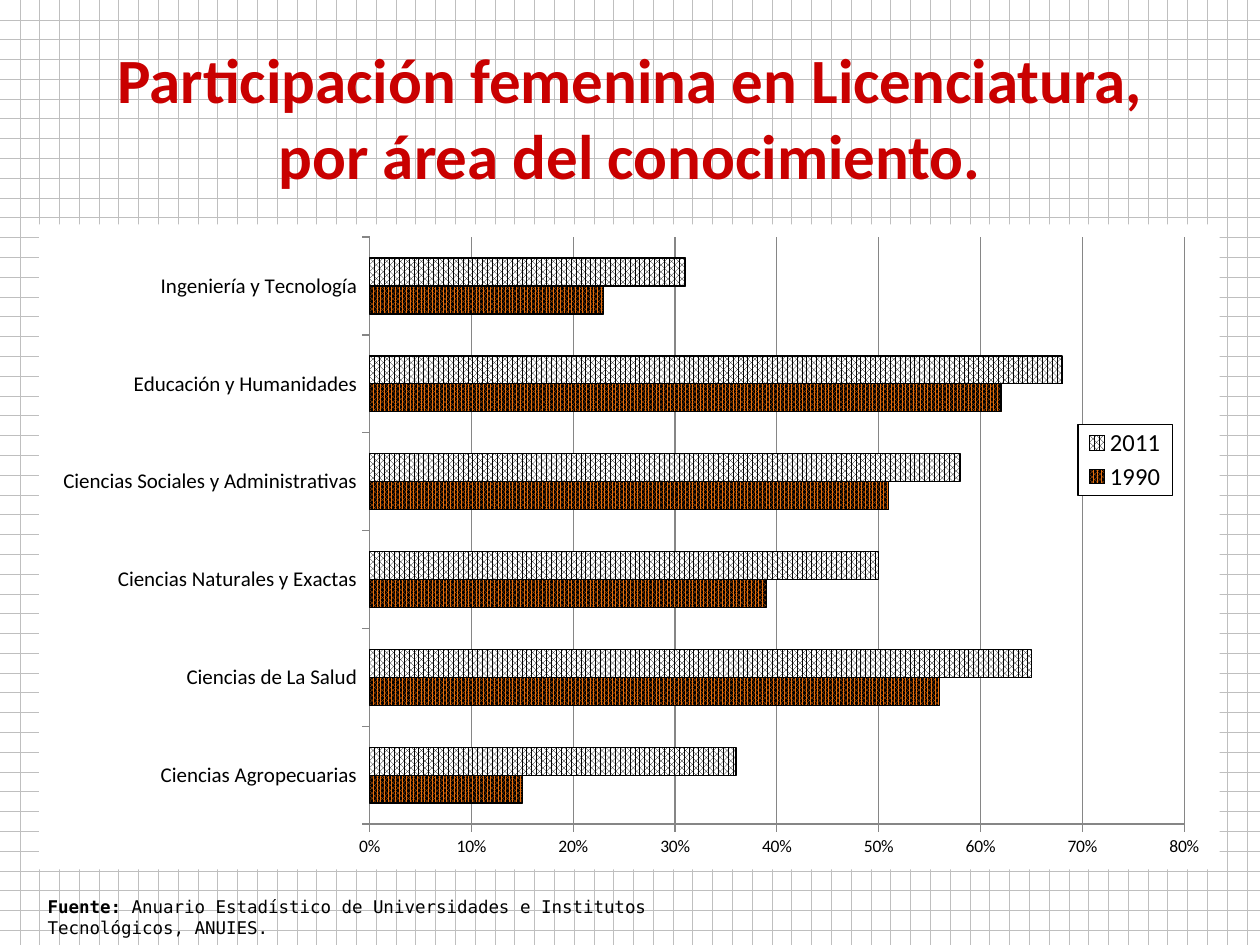
"""Build a slide that compares women's share of degrees by field in 1990 and 2011."""
from pptx import Presentation
from pptx.chart.data import CategoryChartData
from pptx.dml.color import RGBColor
from pptx.enum.chart import XL_CHART_TYPE, XL_LEGEND_POSITION, XL_TICK_MARK
from pptx.enum.dml import MSO_PATTERN
from pptx.enum.text import MSO_ANCHOR, PP_ALIGN
from pptx.oxml import parse_xml
from pptx.util import Inches, Pt

BARS = XL_CHART_TYPE.BAR_CLUSTERED
RIGHT = XL_LEGEND_POSITION.RIGHT
OUT = XL_TICK_MARK.OUTSIDE
GRID = MSO_PATTERN.DOTTED_GRID
DENSE, LOOSE = MSO_PATTERN.PERCENT_80, MSO_PATTERN.PERCENT_75
CENTER, MIDDLE = PP_ALIGN.CENTER, MSO_ANCHOR.MIDDLE

TITLE = "Participación femenina en Licenciatura, por área del conocimiento."
SOURCE = [
    ("Fuente: ", True),
    ("Anuario Estadístico de Universidades e Institutos Tecnológicos, ANUIES.", False),
]
SHARES = [
    ("Ciencias Agropecuarias", 0.15, 0.36),
    ("Ciencias de La Salud", 0.56, 0.65),
    ("Ciencias Naturales y Exactas", 0.39, 0.50),
    ("Ciencias Sociales y Administrativas", 0.51, 0.58),
    ("Educación y Humanidades", 0.62, 0.68),
    ("Ingeniería y Tecnología", 0.23, 0.31),
]
YEARS = [("1990", DENSE, "orange", "black"), ("2011", LOOSE, "black", "white")]
THEME = {
    "font": "Calibri", "mono": "DejaVu Sans Mono",
    "red": "C90000", "orange": "E46C0A", "black": "000000",
    "white": "FFFFFF", "grid": "BFBFBF", "axis": "868686",
    "title": 36, "small": 10, "label": 12, "legend": 14,
}
PLACES = {
    "title": (0.5, 0.3, 9, 1.25),
    "chart": (0.31, 1.78, 9.37, 5.12),
    "source": (0.28, 7.06, 5.34, 0.27),
}
PLOT_BOX = (0.28, 0.02, 0.69, 0.91)
KEY_BOX = (0.88, 0.31, 0.08, 0.11)
SPACES = (
    'xmlns:c="http://schemas.openxmlformats.org/drawingml/2006/chart" '
    'xmlns:a="http://schemas.openxmlformats.org/drawingml/2006/main"'
)


def place(name):
    return [Inches(n) for n in PLACES[name]]


def color(name):
    return RGBColor.from_string(THEME[name])


def style(font, size, face="font", tint="black", bold=False):
    font.name, font.size, font.bold = THEME[face], Pt(THEME[size]), bold
    font.color.rgb = color(tint)


def pattern(fill, kind, front, back):
    fill.patterned()
    fill.pattern = kind
    fill.fore_color.rgb, fill.back_color.rgb = color(front), color(back)


def layout(box, inner=False):
    target = '<c:layoutTarget val="inner"/>' if inner else ""
    modes = "".join(f'<c:{side}Mode val="edge"/>' for side in "xy")
    sizes = "".join(f'<c:{tag} val="{n}"/>' for tag, n in zip("xywh", box))
    return parse_xml(
        f"<c:layout {SPACES}><c:manualLayout>{target}{modes}{sizes}"
        "</c:manualLayout></c:layout>"
    )


def panel(line):
    edge = f'<a:solidFill><a:srgbClr val="{THEME[line]}"/></a:solidFill>' if line else "<a:noFill/>"
    return parse_xml(
        f'<c:spPr {SPACES}><a:solidFill><a:srgbClr val="{THEME["white"]}"/></a:solidFill>'
        f'<a:ln w="9525">{edge}</a:ln></c:spPr>'
    )


def drop_layout(node):
    for old in node.xpath("./c:layout"):
        node.remove(old)


def add_title(slide):
    title = slide.shapes.title
    title.left, title.top, title.width, title.height = place("title")
    frame = title.text_frame
    frame.text, frame.word_wrap, frame.vertical_anchor = TITLE, True, MIDDLE
    line = frame.paragraphs[0]
    line.alignment = CENTER
    style(line.runs[0].font, "title", tint="red", bold=True)


def add_shares(slide):
    data = CategoryChartData(number_format="0%")
    data.categories = [row[0] for row in SHARES]
    for col, year in enumerate(YEARS, 1):
        data.add_series(year[0], [row[col] for row in SHARES])
    chart = slide.shapes.add_chart(BARS, *place("chart"), data).chart
    chart.has_title = False
    style(chart.font, "small")

    plot = chart.plots[0]
    plot.gap_width, plot.overlap, plot.vary_by_categories = 150, 0, False
    for bars, (_, kind, front, back) in zip(plot.series, YEARS):
        pattern(bars.format.fill, kind, front, back)
        bars.format.line.color.rgb = color("black")
        bars.format.line.width = Pt(0.75)

    fields, scale = chart.category_axis, chart.value_axis
    for axis, size in ((fields, "label"), (scale, "small")):
        axis.major_tick_mark = OUT
        axis.format.line.color.rgb = color("axis")
        style(axis.tick_labels.font, size)
    scale.minimum_scale, scale.maximum_scale, scale.major_unit = 0, 0.8, 0.1
    scale.has_major_gridlines = True
    scale.major_gridlines.format.line.color.rgb = color("axis")
    scale.tick_labels.number_format = "0%"
    scale.tick_labels.number_format_is_linked = False

    chart.has_legend = True
    key = chart.legend
    key.position, key.include_in_layout = RIGHT, True
    style(key.font, "legend")
    node = key._element
    drop_layout(node)
    node.xpath("./c:legendPos")[0].addnext(layout(KEY_BOX))
    node.xpath("./c:overlay")[0].addnext(panel("black"))

    root = chart._chartSpace
    area = root.xpath("./c:chart/c:plotArea")[0]
    drop_layout(area)
    area.insert(0, layout(PLOT_BOX, inner=True))
    root.xpath("./c:chart")[0].addnext(panel(None))


def add_source(slide):
    frame = slide.shapes.add_textbox(*place("source")).text_frame
    frame.word_wrap = True
    for text, bold in SOURCE:
        run = frame.paragraphs[0].add_run()
        run.text = text
        style(run.font, "small", face="mono", bold=bold)


def main():
    deck = Presentation()
    deck.slide_width, deck.slide_height = Inches(10), Inches(7.5)
    slide = deck.slides.add_slide(deck.slide_layouts[5])
    pattern(slide.background.fill, GRID, "grid", "white")
    add_title(slide)
    add_shares(slide)
    add_source(slide)
    deck.save("out.pptx")


if __name__ == "__main__":
    main()
